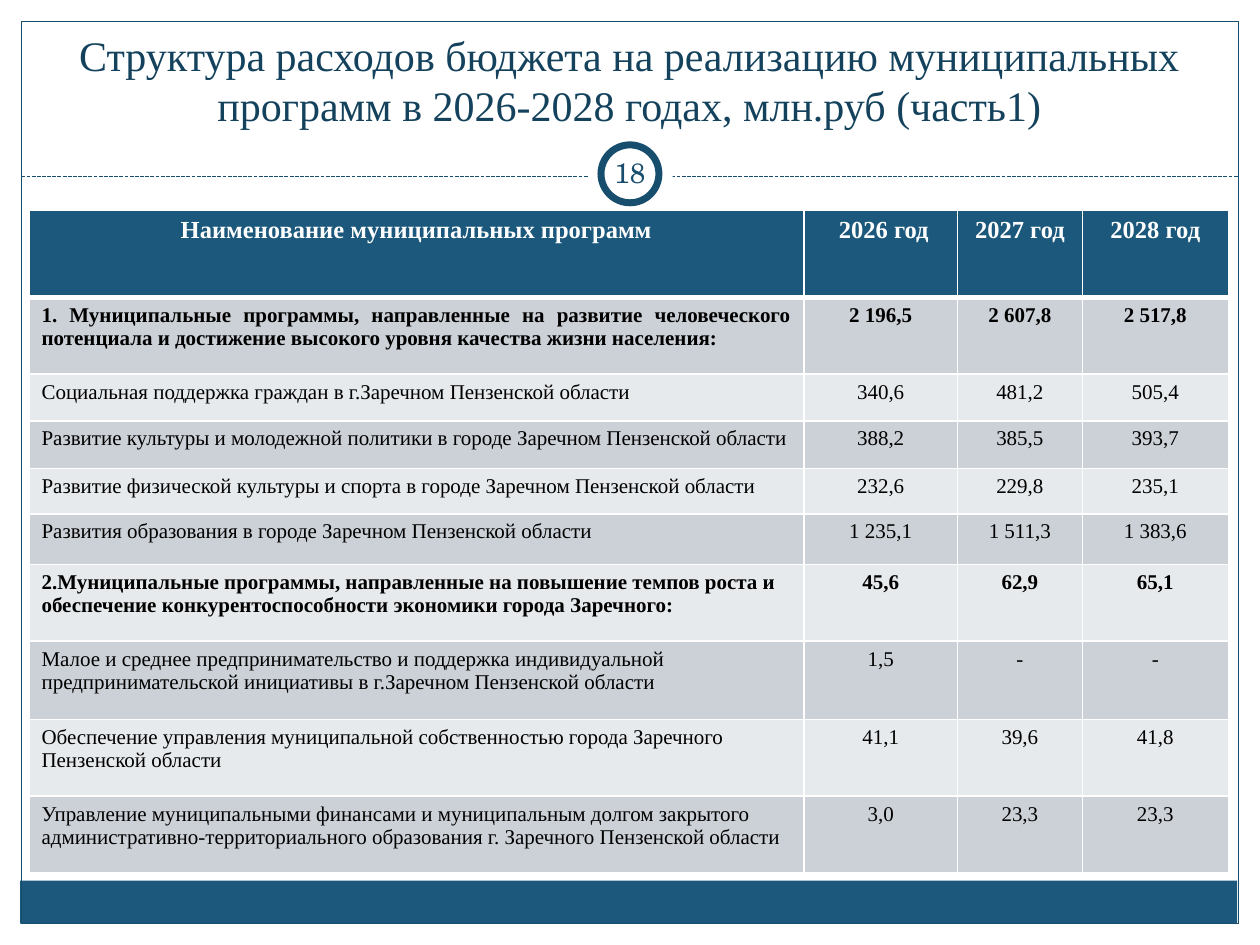
from lxml import etree
from pptx import Presentation
from pptx.dml.color import RGBColor
from pptx.enum.dml import MSO_LINE
from pptx.enum.shapes import MSO_CONNECTOR, MSO_SHAPE
from pptx.enum.text import MSO_ANCHOR, PP_ALIGN
from pptx.oxml.ns import qn
from pptx.util import Inches, Pt

RECTANGLE, ELLIPSE = MSO_SHAPE.RECTANGLE, MSO_SHAPE.OVAL
STRAIGHT = MSO_CONNECTOR.STRAIGHT
DASH = MSO_LINE.SQUARE_DOT
LEFT, CENTER, JUSTIFY = PP_ALIGN.LEFT, PP_ALIGN.CENTER, PP_ALIGN.JUSTIFY
BOTTOM, MIDDLE = MSO_ANCHOR.BOTTOM, MSO_ANCHOR.MIDDLE

COLORS = {
    "white": "FFFFFF",
    "black": "000000",
    "band": "1B587C",
    "frame": "184E6D",
    "title": "14425D",
    "odd": "CCD1D7",
    "even": "E7EAEC",
}
BODY_FONT = "Times New Roman"
NUMBER_FONT = "TeX Gyre Schola"

COLUMN_WIDTHS = [6.15, 1.22, 0.99, 1.16]
ROW_HEIGHTS = [0.69, 0.61, 0.37, 0.38, 0.36, 0.4, 0.61, 0.62, 0.61, 0.61]
SECTION_ROWS = (1, 6)
ROWS = [
    ("Наименование муниципальных программ", " 2026 год", "2027 год", "2028 год"),
    ("1. Муниципальные программы, направленные на развитие человеческого потенциала "
     "и достижение высокого уровня качества жизни населения:",
     "2 196,5", "2 607,8", "2 517,8"),
    ("Социальная поддержка граждан в г.Заречном Пензенской области",
     "340,6", "481,2", "505,4"),
    ("Развитие культуры и молодежной политики в городе Заречном Пензенской области",
     "388,2", "385,5", "393,7"),
    ("Развитие физической культуры и спорта в городе Заречном Пензенской области",
     "232,6", "229,8", "235,1"),
    ("Развития образования в городе Заречном Пензенской области",
     "1 235,1", "1 511,3", "1 383,6"),
    ("2.Муниципальные программы, направленные на повышение темпов роста "
     "и обеспечение конкурентоспособности экономики города Заречного:",
     "45,6", "62,9", "65,1"),
    ("Малое и среднее предпринимательство и поддержка индивидуальной "
     "предпринимательской инициативы в г.Заречном Пензенской области",
     "1,5", "-", "-"),
    ("Обеспечение управления муниципальной собственностью города Заречного "
     "Пензенской области",
     "41,1", "39,6", "41,8"),
    ("Управление муниципальными финансами и муниципальным долгом закрытого "
     "административно-территориального образования г. Заречного Пензенской области",
     "3,0", "23,3", "23,3"),
]


def color(name):
    return RGBColor.from_string(COLORS[name])


class SlideBuilder:
    def __init__(self, slide):
        self.slide = slide

    def style(self, para, text, size, tint, font=BODY_FONT, align=CENTER, bold=False):
        para.text = text
        para.alignment = align
        para.font.name = font
        para.font.size = Pt(size)
        para.font.bold = bold
        para.font.color.rgb = color(tint)

    def shape(self, kind, place, fill=None, line=None, width=0.75):
        shape = self.slide.shapes.add_shape(kind, *map(Inches, place))
        shape.shadow.inherit = False
        if fill:
            shape.fill.solid()
            shape.fill.fore_color.rgb = color(fill)
        else:
            shape.fill.background()
        if line:
            shape.line.color.rgb = color(line)
            shape.line.width = Pt(width)
        else:
            shape.line.fill.background()

    def dashed_line(self, start, end, tint):
        line = self.slide.shapes.add_connector(STRAIGHT, *map(Inches, start + end))
        line.line.color.rgb = color(tint)
        line.line.width = Pt(0.75)
        line.line.dash_style = DASH
        etree.SubElement(line._element.spPr, qn("a:effectLst"))

    def text(self, place, text, size, tint, anchor, font=BODY_FONT, side=0.1):
        box = self.slide.shapes.add_textbox(*map(Inches, place))
        frame = box.text_frame
        frame.word_wrap = True
        frame.vertical_anchor = anchor
        frame.margin_left = frame.margin_right = Inches(side)
        self.style(frame.paragraphs[0], text, size, tint, font)

    def borders(self, cell, top, bottom):
        properties = cell._tc.get_or_add_tcPr()
        widths = {"a:lnL": 1, "a:lnR": 1, "a:lnT": top, "a:lnB": bottom}
        for position, (tag, width) in enumerate(widths.items()):
            edge = etree.Element(qn(tag), w=str(Pt(width)))
            fill = etree.SubElement(edge, qn("a:solidFill"))
            etree.SubElement(fill, qn("a:srgbClr"), val=COLORS["white"])
            properties.insert(position, edge)

    def table(self, left, top):
        width, height = sum(COLUMN_WIDTHS), sum(ROW_HEIGHTS)
        place = map(Inches, (left, top, width, height))
        table = self.slide.shapes.add_table(len(ROWS), len(COLUMN_WIDTHS), *place).table
        for column, column_width in zip(table.columns, COLUMN_WIDTHS):
            column.width = Inches(column_width)
        for index, (row, row_height) in enumerate(zip(table.rows, ROW_HEIGHTS)):
            row.height = Inches(row_height)
            header = index == 0
            fill = "band" if header else "odd" if index % 2 else "even"
            name_align = {0: CENTER, 1: JUSTIFY}.get(index, LEFT)
            for number, (cell, text) in enumerate(zip(row.cells, ROWS[index])):
                cell.fill.solid()
                cell.fill.fore_color.rgb = color(fill)
                self.borders(cell, 3 if index == 1 else 1, 3 if header else 1)
                self.style(
                    cell.text_frame.paragraphs[0], text,
                    14 if header else 12,
                    "white" if header else "black",
                    align=CENTER if number else name_align,
                    bold=header or index in SECTION_ROWS,
                )


def main():
    deck = Presentation()
    deck.slide_width, deck.slide_height = Inches(10), Inches(7.5)
    page = SlideBuilder(deck.slides.add_slide(deck.slide_layouts[6]))

    for margin in ((0, 0, 10, 1.52), (0, 0, 0.17, 7.5), (9.83, 0, 0.17, 7.5)):
        page.shape(RECTANGLE, margin, "white")
    page.shape(RECTANGLE, (0.16, 6.99, 9.66, 0.34), "band")
    page.shape(RECTANGLE, (0.17, 0.17, 9.66, 7.16), line="frame")
    page.dashed_line((0.17, 1.4), (9.83, 1.4), "frame")
    page.shape(ELLIPSE, (4.67, 1.05, 0.67, 0.67), "white")
    page.shape(ELLIPSE, (4.77, 1.15, 0.46, 0.46), "white", "frame", 4)

    page.text(
        (0.33, 0.25, 9.33, 0.83),
        "Структура расходов бюджета на реализацию муниципальных "
        "программ в 2026-2028 годах, млн.руб (часть1)",
        24, "title", BOTTOM,
    )
    page.text((4.75, 1.13, 0.5, 0.48), "18", 16, "frame", MIDDLE, NUMBER_FONT, 0.05)
    page.table(0.23, 1.67)
    deck.save("out.pptx")


if __name__ == "__main__":
    main()
